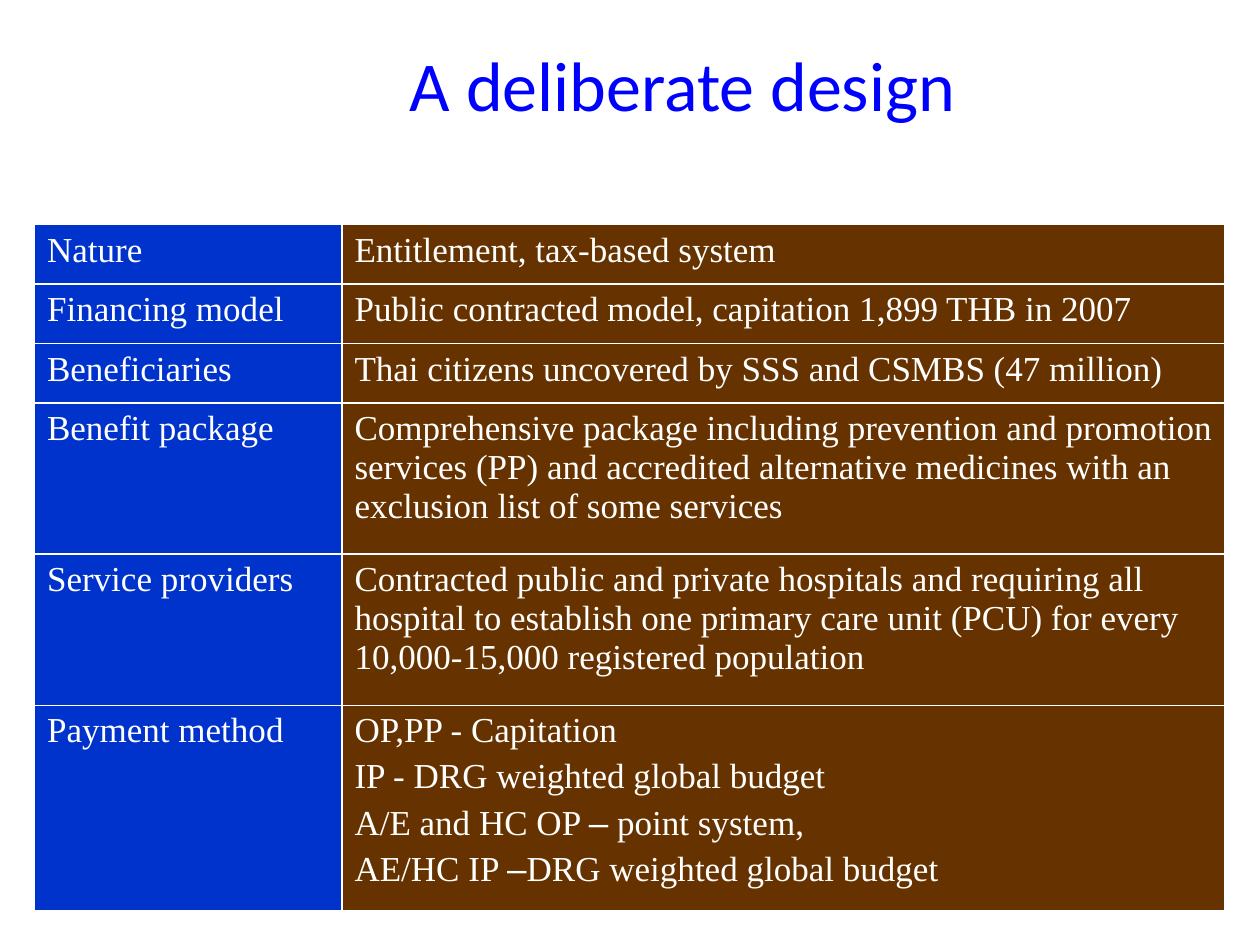
from lxml import etree
from pptx import Presentation
from pptx.dml.color import RGBColor
from pptx.enum.text import MSO_ANCHOR, MSO_AUTO_SIZE, PP_ALIGN
from pptx.oxml.ns import qn
from pptx.util import Pt

CENTER, LEFT = PP_ALIGN.CENTER, PP_ALIGN.LEFT
MIDDLE, TOP = MSO_ANCHOR.MIDDLE, MSO_ANCHOR.TOP
NO_AUTOFIT = MSO_AUTO_SIZE.NONE
TITLE_ONLY = 5

WHITE = RGBColor(0xFF, 0xFF, 0xFF)
TITLE_BLUE = RGBColor(0x00, 0x00, 0xFF)
LABEL_BLUE = RGBColor(0x00, 0x33, 0xCC)
DETAIL_BROWN = RGBColor(0x66, 0x33, 0x00)

COL_WIDTHS = [175.7, 504.7]
SCHEME = [  # label, detail paragraphs, row height
    ("Nature", ["Entitlement, tax-based system"], 34),
    ("Financing model",
     ["Public contracted model, capitation 1,899 THB in 2007"], 34),
    ("Beneficiaries",
     ["Thai citizens uncovered by SSS and CSMBS (47 million)"], 34),
    ("Benefit package",
     ["Comprehensive package including prevention and promotion services (PP) "
      "and accredited alternative medicines with an exclusion list of some "
      "services"], 86.4),
    ("Service providers",
     ["Contracted public and private hospitals and requiring all hospital to "
      "establish one primary care unit (PCU) for every 10,000-15,000 "
      "registered population"], 86.4),
    ("Payment method",
     ["OP,PP - Capitation",
      "IP - DRG weighted global budget",
      "A/E and HC OP – point system,",
      "AE/HC IP –DRG weighted global budget"], 117.2),
]


def write(p, text, font, size, color, align=LEFT, before=0, dash_font=None):
    """Fill a paragraph; en dashes may take a font of their own."""
    p.alignment = align
    p.space_before = Pt(before)
    for part in text.partition("–"):
        if part:
            r = p.add_run()
            r.text = part
            r.font.name = dash_font if dash_font and part == "–" else font
            r.font.size = Pt(size)
            r.font.color.rgb = color


def set_borders(cell, color, width):
    tcPr = cell._tc.get_or_add_tcPr()
    for i, side in enumerate(("lnL", "lnR", "lnT", "lnB")):
        ln = etree.Element(qn(f"a:{side}"), w=str(int(Pt(width))))
        fill = etree.SubElement(ln, qn("a:solidFill"))
        etree.SubElement(fill, qn("a:srgbClr"), val=str(color))
        tcPr.insert(i, ln)


class SlideBuilder:
    title_style = dict(font="Calibri", size=40, color=TITLE_BLUE, align=CENTER)
    cell_style = dict(font="Times New Roman", size=20, color=WHITE, before=4,
                      dash_font="Arial")

    def __init__(self, prs):
        self.s = prs.slides.add_slide(prs.slide_layouts[TITLE_ONLY])

    def title(self, text, x, y, w, h):
        sp = self.s.shapes.title
        sp.left, sp.top, sp.width, sp.height = Pt(x), Pt(y), Pt(w), Pt(h)
        tf = sp.text_frame
        tf.auto_size = NO_AUTOFIT
        tf.vertical_anchor = MIDDLE
        write(tf.paragraphs[0], text, **self.title_style)

    def cell(self, cell, lines, fill):
        cell.fill.solid()
        cell.fill.fore_color.rgb = fill
        cell.vertical_anchor = TOP
        cell.margin_left = cell.margin_right = Pt(7.2)
        cell.margin_top = cell.margin_bottom = Pt(3.6)
        set_borders(cell, WHITE, 1)
        tf = cell.text_frame
        for i, line in enumerate(lines):
            p = tf.add_paragraph() if i else tf.paragraphs[0]
            write(p, line, **self.cell_style)

    def table(self, rows, widths, x, y):
        height = sum(h for _, _, h in rows)
        table = self.s.shapes.add_table(len(rows), len(widths), Pt(x), Pt(y),
                                        Pt(sum(widths)), Pt(height)).table
        table.first_row = table.horz_banding = False
        for col, width in zip(table.columns, widths):
            col.width = Pt(width)
        for row, (label, details, h) in zip(table.rows, rows):
            row.height = Pt(h)
            self.cell(row.cells[0], [label], LABEL_BLUE)
            self.cell(row.cells[1], details, DETAIL_BROWN)


def main():
    prs = Presentation()
    prs.slide_width, prs.slide_height = Pt(720), Pt(540)
    slide = SlideBuilder(prs)
    slide.title("A deliberate design", 84, 18, 612, 59)
    slide.table(SCHEME, COL_WIDTHS, 19.7, 128.3)
    prs.save("out.pptx")


if __name__ == "__main__":
    main()
